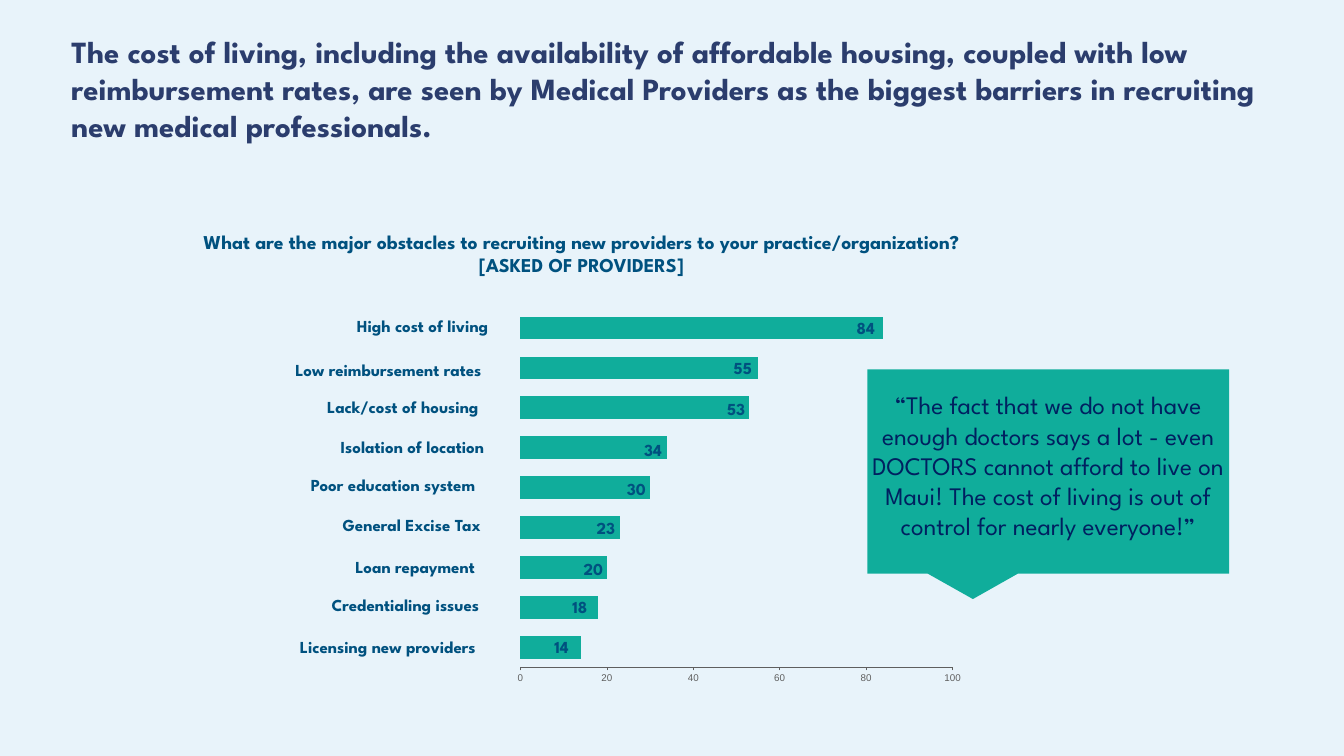
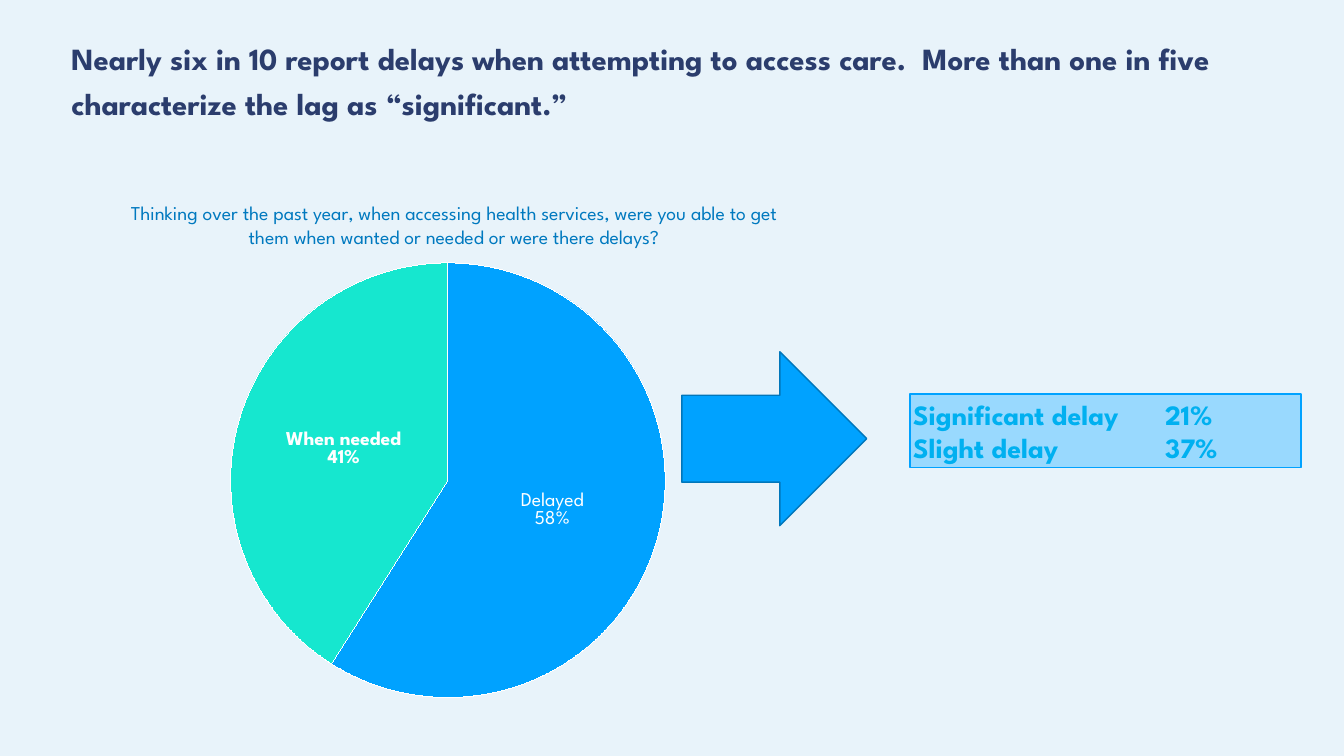
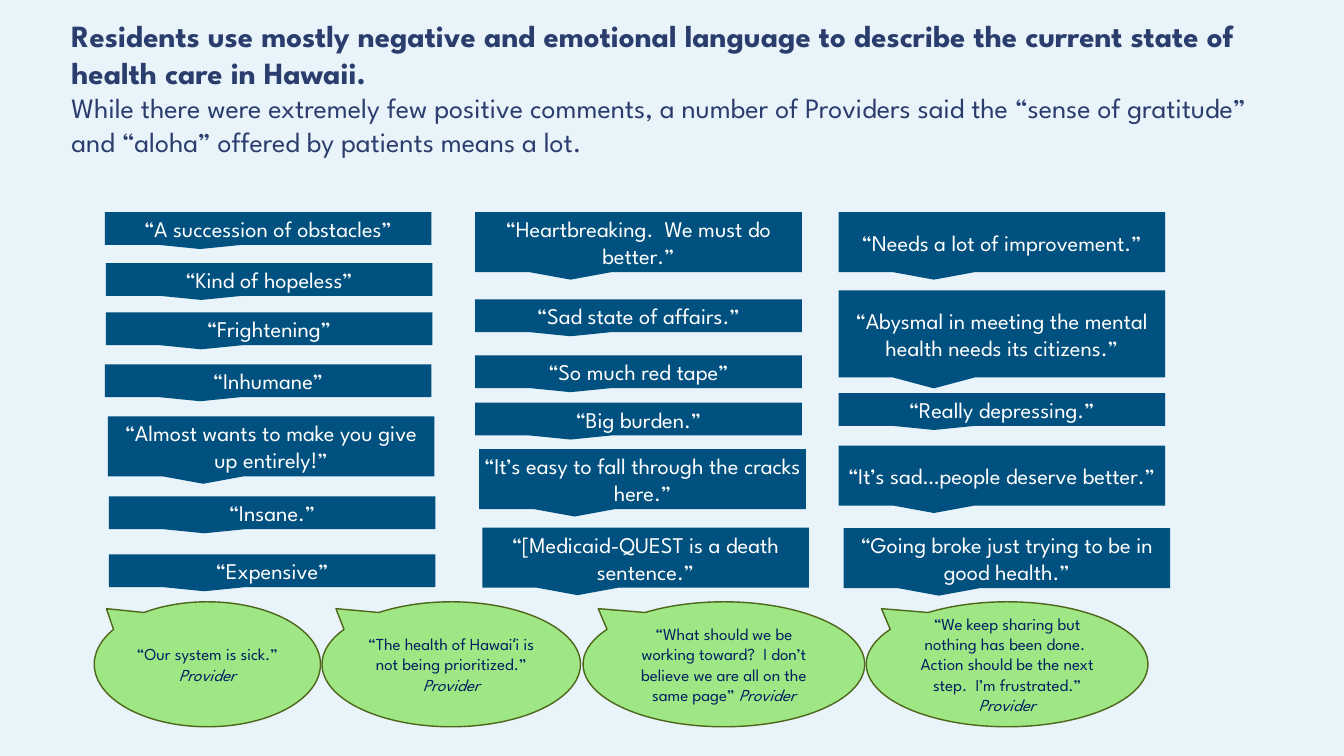
"""Build three slides of health care survey findings."""
from lxml import etree
from pptx import Presentation
from pptx import util as u
from pptx.chart.data import CategoryChartData
from pptx.dml.color import RGBColor
from pptx.enum import chart as ch, shapes, text
from pptx.oxml.ns import qn

FONT = "League Spartan"
PALE, INDIGO, NAVY, DEEP, WHITE = "E8F3FA", "2B3D6D", "002060", "00517F", "FFFFFF"
TEAL, BLUE, MINT, GREY = "10AD9B", "00A2FF", "16E7CF", "5E5E5E"
GREEN, OLIVE = "9FE785", "4F671B"
CENTER, LEFT = text.PP_ALIGN.CENTER, text.PP_ALIGN.LEFT
WIDE, SNUG, ROUND = (0.1, 0.05), (0.06, 0.06), (0.07, 0.07)
POINTER = (-0.208, 0.625)

BARRIER_TITLE = ("The cost of living, including the availability of affordable housing, coupled with low "
                 "reimbursement rates, are seen by Medical Providers as the biggest barriers in recruiting "
                 "new medical professionals.")
BARRIER_QUESTION = ["What are the major obstacles to recruiting new providers to your practice/organization?",
                    "[ASKED OF PROVIDERS]"]
# obstacle, label (left, top, width), count, count (left, top)
OBSTACLES = [
    ("High cost of living", (7.02, 6.2, 3.39), 84, (16.94, 6.24)),
    ("Low reimbursement rates", (5.8, 7.08, 4.17), 55, (14.5, 7.04)),
    ("Lack/cost of housing", (6.43, 7.82, 3.78), 53, (14.37, 7.86)),
    ("Isolation of location", (6.7, 8.6, 4.17), 34, (12.72, 8.66)),
    ("Poor education system", (6.11, 9.36, 5.1), 30, (12.38, 9.44)),
    ("General Excise Tax", (6.74, 10.15, 5.1), 23, (11.78, 10.22)),
    ("Loan repayment", (6.99, 10.98, 5.1), 20, (11.52, 11.02)),
    ("Credentialing issues", (6.52, 11.74, 5.1), 18, (11.3, 11.78)),
    ("Licensing new providers", (5.89, 12.58, 5.1), 14, (10.94, 12.58)),
]
DOCTOR_QUOTE = ("“The fact that we do not have enough doctors says a lot - even DOCTORS cannot afford to live "
                "on Maui! The cost of living is out of control for nearly everyone!”")

DELAY_TITLE = ("Nearly six in 10 report delays when attempting to access care.  More than one in five "
               "characterize the lag as “significant.”")
DELAY_QUESTION = ("Thinking over the past year, when accessing health services, were you able to get them "
                  "when wanted or needed or were there delays?")
ACCESS = [("Delayed", 59, BLUE), ("When needed", 41, MINT)]
DELAYED_LABEL = "Delayed\n58%"
DELAY_SPLIT = ["Significant delay\t21%", "Slight delay\t37%"]

LANGUAGE_TITLE = ("Residents use mostly negative and emotional language to describe the current state of "
                  "health care in Hawaii.")
LANGUAGE_NOTE = ("While there were extremely few positive comments, a number of Providers said the “sense of "
                 "gratitude” and “aloha” offered by patients means a lot.")
# left, top, height in lines, quote
RESIDENT_QUOTES = [
    (2.08, 4.21, 1, "“A succession of obstacles”"),
    (2.1, 5.22, 1, "“Kind of hopeless”"),
    (2.1, 6.2, 1, "“Frightening”"),
    (2.08, 7.23, 1, "“Inhumane”"),
    (2.14, 8.26, 2, "“Almost wants to make you give up entirely!”"),
    (2.16, 9.85, 1, "“Insane.”"),
    (2.16, 11, 1, "“Expensive”"),
    (9.43, 4.21, 2, "“Heartbreaking.  We must do better.”"),
    (9.43, 5.94, 1, "“Sad state of affairs.”"),
    (9.43, 7.05, 1, "“So much red tape”"),
    (9.43, 7.99, 1, "“Big burden.”"),
    (9.51, 8.91, 2, "“It’s easy to fall through the cracks here.”"),
    (9.57, 10.47, 2, "“[Medicaid-QUEST is a death sentence.”"),
    (16.64, 4.21, 2, "“Needs a lot of improvement.”"),
    (16.64, 5.76, 3, "“Abysmal in meeting the mental health needs its citizens.”"),
    (16.64, 7.8, 1, "“Really depressing.”"),
    (16.64, 8.84, 2, "“It’s sad…people deserve better.”"),
    (16.74, 10.48, 2, "“Going broke just trying to be in good health.”"),
]
# left, width, quote
PROVIDER_QUOTES = [
    (1.87, 4.49, "“Our system is sick.” "),
    (6.39, 5.13, "“The health of Hawaiʻi is not being prioritized.” "),
    (11.57, 5.59, "“What should we be working toward?  I don’t believe we are all on the same page” "),
    (17.19, 5.59, "“We keep sharing but nothing has been done.  Action should be the next step.  I’m frustrated.” "),
]


def rgb(code):
    return RGBColor.from_string(code)


def inches(values):
    return [u.Inches(value) for value in values]


def set_font(font, size, color, bold=False, name=FONT):
    font.name, font.size, font.bold = name, u.Pt(size), bold
    font.color.rgb = rgb(color)


def write(box, lines, size, color, bold=False, align=LEFT, inset=SNUG, middle=True, grow=True, tab=None):
    frame = box.text_frame
    frame.word_wrap = True
    frame.auto_size = text.MSO_AUTO_SIZE.SHAPE_TO_FIT_TEXT if grow else text.MSO_AUTO_SIZE.NONE
    frame.vertical_anchor = text.MSO_ANCHOR.MIDDLE if middle else text.MSO_ANCHOR.TOP
    frame.margin_left = frame.margin_right = u.Inches(inset[0])
    frame.margin_top = frame.margin_bottom = u.Inches(inset[1])
    for index, line in enumerate(lines):
        para = frame.add_paragraph() if index else frame.paragraphs[0]
        para.add_run().text = line
        para.alignment = align
        if tab:
            stops = etree.SubElement(para._p.get_or_add_pPr(), qn("a:tabLst"))
            etree.SubElement(stops, qn("a:tab"), pos=str(u.Inches(tab)), algn="l")
        set_font(para.font, size, color, bold)
    return frame


def add_text(page, at, lines, size, color, **style):
    return write(page.shapes.add_textbox(*inches(at)), lines, size, color, **style)


def add_title(page, lines, top=0.6):
    return add_text(page, (1.32, top, 24.03, 2.04), lines, 44, INDIGO, bold=True,
                    inset=WIDE, middle=False, grow=False)


def add_figure(page, kind, at, fill, line=None, adjust=()):
    figure = page.shapes.add_shape(kind, *inches(at))
    figure.shadow.inherit = False
    figure.fill.solid()
    figure.fill.fore_color.rgb = rgb(fill)
    if line:
        figure.line.color.rgb = rgb(line)
        figure.line.width = u.Pt(2)
    else:
        figure.line.fill.background()
    for index, value in enumerate(adjust):
        figure.adjustments[index] = value
    return figure


def add_chart(page, kind, at, names, values, plot_box):
    data = CategoryChartData()
    data.categories = names
    data.add_series("Series 1", values)
    chart = page.shapes.add_chart(kind, *inches(at), data).chart
    chart.has_legend = chart.has_title = False
    set_font(chart.font, 10, GREY, name="Arial")
    area = chart._chartSpace.chart.plotArea
    for old in area.findall(qn("c:layout")):
        area.remove(old)
    layout = etree.Element(qn("c:layout"))
    area.insert(0, layout)
    manual = etree.SubElement(layout, qn("c:manualLayout"))
    settings = [("layoutTarget", "inner"), ("xMode", "edge"), ("yMode", "edge"), *zip("xywh", plot_box)]
    for tag, value in settings:
        etree.SubElement(manual, qn("c:" + tag), val=str(value))
    return chart


def build_barriers(page):
    add_title(page, [BARRIER_TITLE])
    add_text(page, (0.78, 4.51, 21.51, 1.04), BARRIER_QUESTION, 28, DEEP, bold=True,
             align=CENTER, inset=WIDE, middle=False)
    rising = OBSTACLES[::-1]
    chart = add_chart(page, ch.XL_CHART_TYPE.BAR_STACKED, (0, 5.08, 19.27, 8.75),
                      [row[0] for row in rising], [row[2] for row in rising], (0.536, 0.118, 0.445, 0.815))
    plot = chart.plots[0]
    plot.gap_width, plot.overlap, plot.vary_by_categories = 75, 100, False
    bars = plot.series[0].format.fill
    bars.solid()
    bars.fore_color.rgb = rgb(TEAL)
    chart.category_axis.visible = False
    axis = chart.value_axis
    axis.minimum_scale, axis.maximum_scale, axis.major_unit = 0, 100, 20
    axis.has_major_gridlines = False
    axis.major_tick_mark = ch.XL_TICK_MARK.OUTSIDE
    set_font(axis.tick_labels.font, 14, GREY, name="Arial")
    axis.format.line.color.rgb = rgb(GREY)
    axis.format.line.width = u.Pt(0.75)
    for obstacle, label_at, count, count_at in OBSTACLES:
        add_text(page, (*label_at, 0.52), [obstacle], 24, DEEP, bold=True)
        add_text(page, (*count_at, 0.9, 0.52), [str(count)], 24, DEEP, bold=True)
    callout = add_figure(page, shapes.MSO_SHAPE.ROUNDED_RECTANGULAR_CALLOUT, (17.21, 7.33, 7.18, 4.05),
                         TEAL, adjust=(*POINTER, 0))
    write(callout, [DOCTOR_QUOTE], 36, NAVY, align=CENTER).margin_bottom = u.Inches(0.31)


def build_delays(page):
    names, values, colors = zip(*ACCESS)
    chart = add_chart(page, ch.XL_CHART_TYPE.PIE, (1.73, 4.94, 14.61, 8.9), names, values,
                      (0.167, 0.031, 0.646, 0.969))
    series = chart.plots[0].series[0]
    for index, color in enumerate(colors):
        wedge = series.points[index].format
        wedge.fill.solid()
        wedge.fill.fore_color.rgb = rgb(color)
        wedge.line.color.rgb = rgb(WHITE)
    labels = series.data_labels
    labels.show_category_name = labels.show_percentage = True
    labels.show_value = False
    labels.position = ch.XL_LABEL_POSITION.CENTER
    set_font(labels.font, 28, WHITE, bold=True)
    separator = etree.Element(qn("c:separator"))
    separator.text = "\n"
    labels._element.find(qn("c:showBubbleSize")).addnext(separator)
    delayed = series.points[0].data_label
    delayed.text_frame.text = DELAYED_LABEL
    for para in delayed.text_frame.paragraphs:
        for span in para.runs:
            set_font(span.font, 28, WHITE)
    delayed.position = ch.XL_LABEL_POSITION.CENTER

    add_title(page, [DELAY_TITLE]).paragraphs[0].line_spacing = 1.2
    add_figure(page, shapes.MSO_SHAPE.RIGHT_ARROW, (13.53, 6.98, 3.67, 3.45), BLUE, "0076BA")
    split = add_figure(page, shapes.MSO_SHAPE.RECTANGLE, (18.06, 7.82, 7.76, 1.46), "99D9FE", BLUE)
    write(split, DELAY_SPLIT, 40, "00B0F0", bold=True, tab=5)
    add_text(page, (2.15, 3.93, 13.71, 1.05), [DELAY_QUESTION], 28, "0079BF", align=CENTER)


def build_language(page):
    note = add_title(page, [LANGUAGE_TITLE, LANGUAGE_NOTE], top=0.28).paragraphs[1]
    set_font(note.font, 40, INDIGO)
    for left, top, lines, quote in RESIDENT_QUOTES:
        callout = add_figure(page, shapes.MSO_SHAPE.RECTANGULAR_CALLOUT,
                             (left, top, 6.48, 0.11 + 0.54 * lines), DEEP, adjust=POINTER)
        write(callout, [quote], 32, WHITE, align=CENTER)
    for left, width, quote in PROVIDER_QUOTES:
        bubble = add_figure(page, shapes.MSO_SHAPE.OVAL_CALLOUT, (left, 11.94, width, 2.48),
                            GREEN, OLIVE, adjust=(-0.446, -0.445))
        frame = write(bubble, [quote], 24, NAVY, align=CENTER, inset=ROUND, grow=False)
        speaker = frame.paragraphs[0].add_run()
        speaker.text = "Provider"
        speaker.font.italic = True


def main():
    deck = Presentation()
    deck.slide_width, deck.slide_height = inches((26.67, 15))
    backdrop = deck.slide_master.background.fill
    backdrop.solid()
    backdrop.fore_color.rgb = rgb(PALE)
    for build in (build_barriers, build_delays, build_language):
        build(deck.slides.add_slide(deck.slide_layouts[6]))
    deck.save("out.pptx")


if __name__ == "__main__":
    main()
